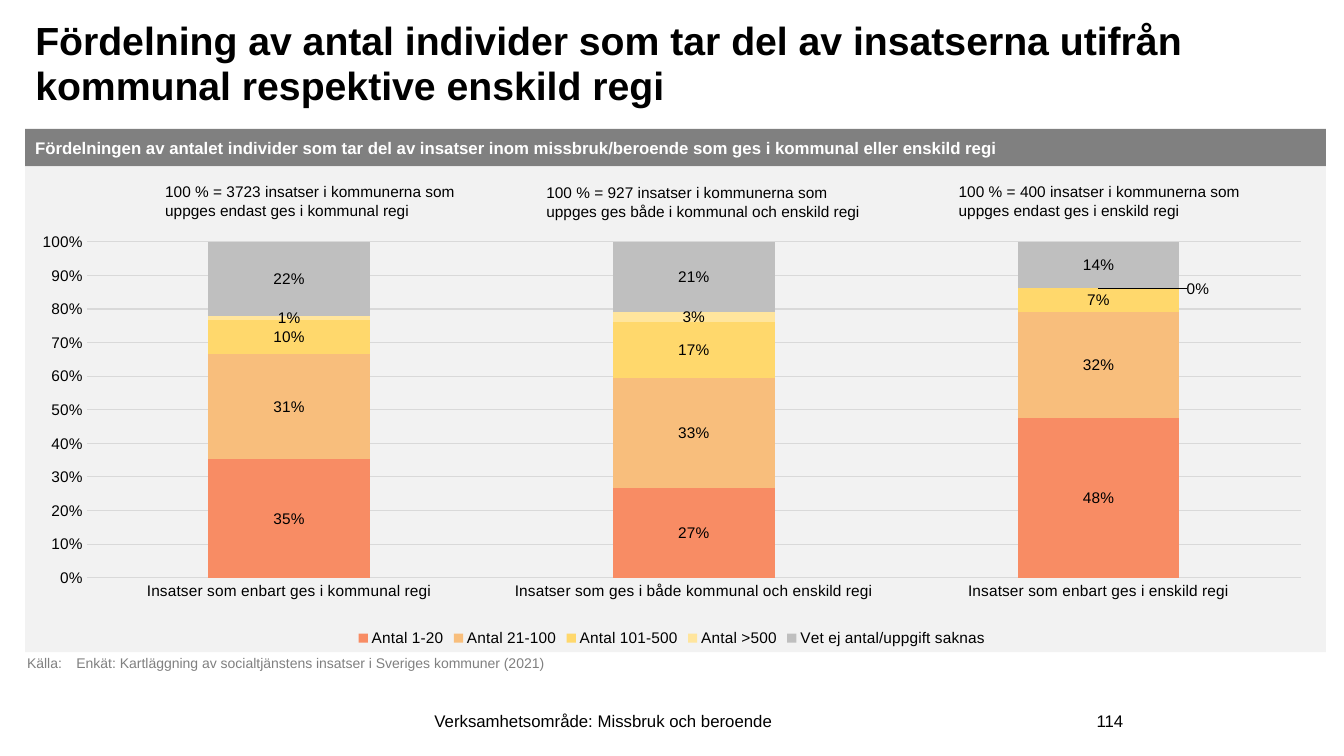
from dataclasses import dataclass

from lxml import etree
from pptx import Presentation
from pptx.chart.data import CategoryChartData
from pptx.dml.color import RGBColor
from pptx.enum.chart import XL_CHART_TYPE as ChartType
from pptx.enum.chart import XL_LABEL_POSITION as LabelPos
from pptx.enum.chart import XL_LEGEND_POSITION as LegendPos
from pptx.enum.chart import XL_TICK_MARK as TickMark
from pptx.enum.shapes import MSO_SHAPE as Preset
from pptx.enum.text import MSO_ANCHOR as Anchor
from pptx.enum.text import MSO_AUTO_SIZE as AutoSize
from pptx.enum.text import PP_ALIGN as Align
from pptx.oxml.ns import qn
from pptx.util import Pt

PX = 9144  # 100 px to the inch


@dataclass(frozen=True)
class Theme:
    font: str = "Arial"
    ink: str = "000000"
    inverse: str = "FFFFFF"
    band: str = "808080"
    panel: str = "F2F2F2"
    grid: str = "D9D9D9"
    title_size: int = 28
    text_size: int = 12
    chart_size: int = 11
    source_size: int = 10


THEME = Theme()

REGIMES = [
    "Insatser som enbart ges i kommunal regi",
    "Insatser som ges i både kommunal och enskild regi",
    "Insatser som enbart ges i enskild regi",
]
INTERVALS = [
    ("Antal 1-20", "F88C64", (0.35, 0.27, 0.48)),
    ("Antal 21-100", "F8BE7C", (0.31, 0.33, 0.32)),
    ("Antal 101-500", "FFD86C", (0.10, 0.17, 0.07)),
    ("Antal >500", "FFE59D", (0.01, 0.03, 0)),
    ("Vet ej antal/uppgift saknas", "BFBFBF", (0.22, 0.21, 0.14)),
]
BASES = [
    ("100 % = 3723 insatser i kommunerna som uppges endast ges i kommunal regi",
     (154, 176, 313, 47)),
    ("100 % = 927 insatser i kommunerna som uppges ges både i kommunal och enskild regi",
     (532, 177, 345, 47)),
    ("100 % = 400 insatser i kommunerna som uppges endast ges i enskild regi",
     (941, 176, 311, 47)),
]


def emu(box):
    return [side * PX for side in box]


def rgb(code):
    return RGBColor.from_string(code)


def style_font(font, size, color=THEME.ink, bold=False):
    font.name = THEME.font
    font.size = Pt(size)
    font.bold = bold
    font.color.rgb = rgb(color)


def write(shape, text, size=THEME.text_size, color=THEME.ink, bold=False,
          align=Align.LEFT, anchor=Anchor.TOP, spacing=None, tab=None):
    """Put one formatted paragraph in a shape."""
    frame = shape.text_frame
    frame.word_wrap = True
    frame.auto_size = AutoSize.NONE
    frame.vertical_anchor = anchor
    frame.text = text
    line = frame.paragraphs[0]
    line.alignment = align
    if spacing:
        line.line_spacing = spacing
    if tab:
        stops = etree.SubElement(line._p.get_or_add_pPr(), qn("a:tabLst"))
        etree.SubElement(stops, qn("a:tab"), pos=str(tab * PX), algn="l")
    style_font(line.runs[0].font, size, color, bold)


def add_label(slide, box, text, **style):
    write(slide.shapes.add_textbox(*emu(box)), text, **style)


def add_block(slide, box, fill):
    block = slide.shapes.add_shape(Preset.RECTANGLE, *emu(box))
    block.shadow.inherit = False
    block.fill.solid()
    block.fill.fore_color.rgb = rgb(fill)
    block.line.fill.background()
    return block


def set_layout(parent, index, **settings):
    """Place a chart part by hand, in fractions of the chart."""
    for old in parent.findall(qn("c:layout")):
        parent.remove(old)
    layout = etree.Element(qn("c:layout"))
    manual = etree.SubElement(layout, qn("c:manualLayout"))
    for name, value in settings.items():
        etree.SubElement(manual, qn(f"c:{name}"), val=str(value))
    parent.insert(index, layout)


def move_label_beside(point):
    """Move the label of an empty segment to the right of its column."""
    label = point.data_label
    label.position = LabelPos.CENTER
    style_font(label.font, THEME.chart_size)
    element = label._get_or_add_dLbl()
    set_layout(element, 1, x=0.077, y=0)
    element.insert(2, etree.Element(qn("c:numFmt"), formatCode="0%", sourceLinked="0"))


def add_distribution_chart(slide, box):
    shares = CategoryChartData(number_format="0%")
    shares.categories = REGIMES
    for name, _, values in INTERVALS:
        shares.add_series(name, values)
    chart = slide.shapes.add_chart(
        ChartType.COLUMN_STACKED_100, *emu(box), shares).chart
    style_font(chart.font, THEME.chart_size)
    chart.has_title = False

    # Legend
    chart.has_legend = True
    chart.legend.position = LegendPos.BOTTOM
    chart.legend.include_in_layout = False
    style_font(chart.legend.font, THEME.chart_size)

    # Axes
    regime_axis, share_axis = chart.category_axis, chart.value_axis
    for axis in (regime_axis, share_axis):
        axis.major_tick_mark = axis.minor_tick_mark = TickMark.NONE
        style_font(axis.tick_labels.font, THEME.chart_size)
    share_axis.minimum_scale, share_axis.maximum_scale = 0, 1
    share_axis.major_unit = 0.1
    share_axis.tick_labels.number_format = "0%"
    share_axis.tick_labels.number_format_is_linked = False
    share_axis.format.line.fill.background()
    share_axis.has_major_gridlines = True
    for rule in (regime_axis.format.line, share_axis.major_gridlines.format.line):
        rule.color.rgb = rgb(THEME.grid)
        rule.width = Pt(0.75)

    # Columns and their labels
    columns = chart.plots[0]
    columns.gap_width, columns.overlap = 150, 100
    columns.vary_by_categories = False
    for interval, (_, color, values) in zip(columns.series, INTERVALS):
        interval.format.fill.solid()
        interval.format.fill.fore_color.rgb = rgb(color)
        labels = interval.data_labels
        labels.show_value = True
        labels.position = LabelPos.CENTER
        labels.number_format = "0%"
        labels.number_format_is_linked = False
        style_font(labels.font, THEME.chart_size)
        for index, value in enumerate(values):
            if value == 0:
                move_label_beside(interval.points[index])
    set_layout(chart._chartSpace.chart.plotArea, 0, layoutTarget="inner",
               xMode="edge", yMode="edge", x=0.047, y=0.04, w=0.94, h=0.788)


def main():
    deck = Presentation()
    deck.slide_width, deck.slide_height = emu((1333, 750))
    slide = deck.slides.add_slide(deck.slide_layouts[5])

    # Title
    title = slide.shapes.title
    title.left, title.top, title.width, title.height = emu((25, 15, 1236, 135))
    write(title, "Fördelning av antal individer som tar del av insatserna utifrån "
          "kommunal respektive enskild regi",
          size=THEME.title_size, bold=True, spacing=0.95)

    # Panel with heading band
    add_block(slide, (25, 165, 1290, 482), THEME.panel)
    heading = add_block(slide, (25, 128, 1290, 37), THEME.band)
    write(heading, "Fördelningen av antalet individer som tar del av insatser inom "
          "missbruk/beroende som ges i kommunal eller enskild regi",
          color=THEME.inverse, bold=True, anchor=Anchor.MIDDLE)

    # Chart with the base of each column
    add_distribution_chart(slide, (26, 223, 1281, 423))
    for base, box in BASES:
        add_label(slide, box, base, size=THEME.chart_size)

    # Source and footer
    add_label(slide, (17, 644, 1264, 28),
              "Källa:\tEnkät: Kartläggning av socialtjänstens insatser i "
              "Sveriges kommuner (2021)",
              size=THEME.source_size, color=THEME.band, tab=49)
    add_label(slide, (269, 695, 659, 40), "Verksamhetsområde: Missbruk och beroende",
              align=Align.CENTER, anchor=Anchor.MIDDLE)
    add_label(slide, (985, 695, 139, 40), "114",
              align=Align.RIGHT, anchor=Anchor.MIDDLE)

    deck.save("out.pptx")


if __name__ == "__main__":
    main()
